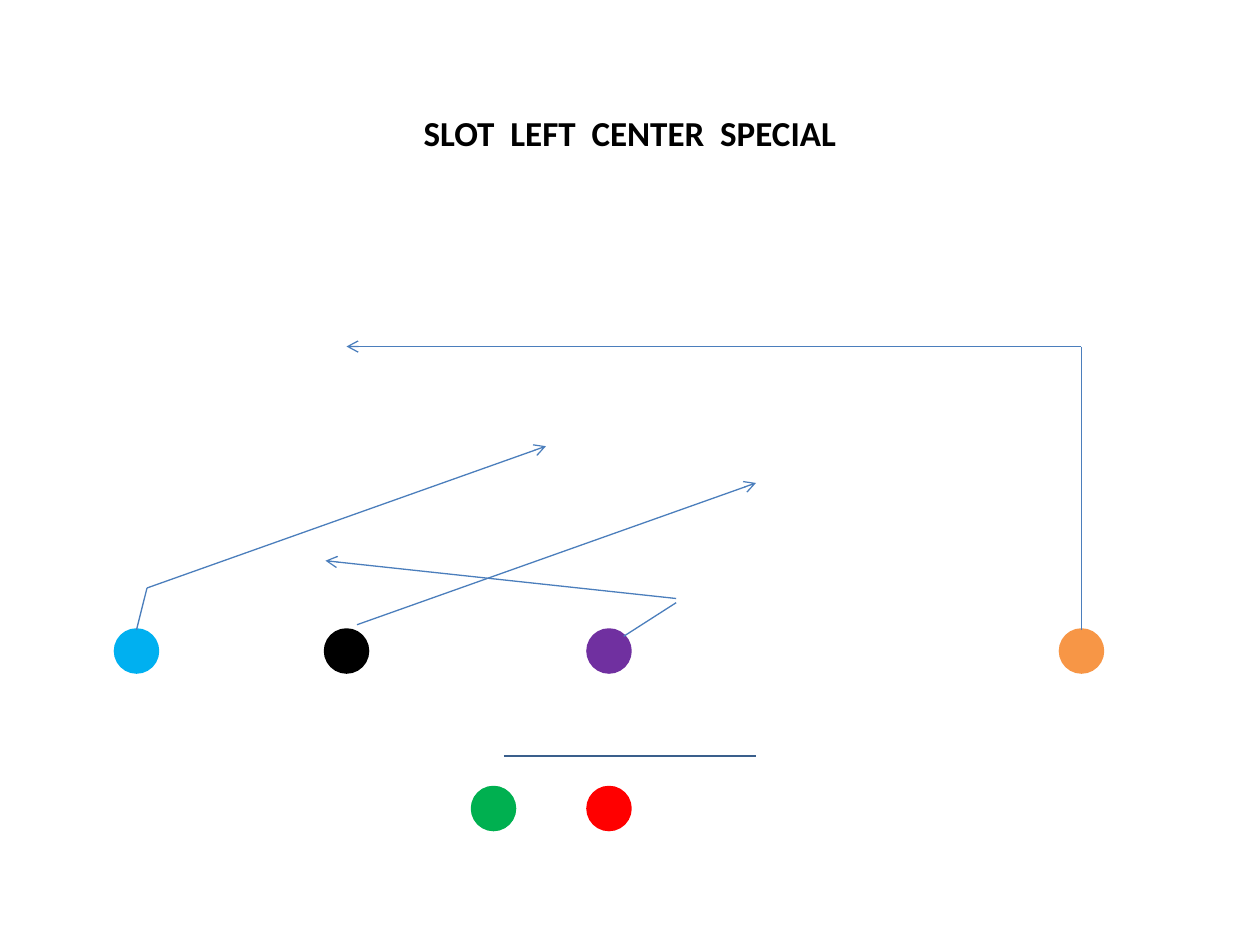
from lxml import etree
from pptx import Presentation
from pptx.dml.color import RGBColor
from pptx.enum.shapes import MSO_CONNECTOR, MSO_SHAPE
from pptx.enum.text import MSO_ANCHOR, MSO_AUTO_SIZE, PP_ALIGN
from pptx.oxml.ns import qn
from pptx.util import Inches, Pt

BLACK = RGBColor(0x00, 0x00, 0x00)
BLUE = RGBColor(0x00, 0xB0, 0xF0)
GREEN = RGBColor(0x00, 0xB0, 0x50)
ORANGE = RGBColor(0xF7, 0x96, 0x46)
PURPLE = RGBColor(0x70, 0x30, 0xA0)
RED = RGBColor(0xFF, 0x00, 0x00)
ROUTE = RGBColor(0x4B, 0x7E, 0xBC)
MOTION = RGBColor(0x3A, 0x5F, 0x8C)

COLUMNS, ROWS = 120, 90  # twelve grid units to the inch
PLAYER_SIZE = 4
OVAL_TOP = 0
LINE_ROW, BACK_ROW = 60, 75

# Inches from the slide's corner
MOTION_POINTS = [
    (4.08, 6.32), (4.23, 6.31), (4.38, 6.3), (4.49, 6.26), (4.52, 6.25),
    (4.55, 6.22), (4.59, 6.21), (4.61, 6.17), (4.65, 6.13), (4.66, 6.11),
    (4.66, 6.08), (4.64, 6.04), (4.6, 6.02), (4.63, 6.04), (4.72, 6.02),
    (4.76, 6.01), (4.82, 6.02), (4.86, 6.04), (5, 6.05), (5.53, 6.04),
    (5.57, 6.02), (5.72, 6.01), (5.76, 6),
]


def format_text(frame, text, size, color, font="Calibri", bold=False,
                align=PP_ALIGN.CENTER):
    para = frame.paragraphs[0]
    para.alignment = align
    span = para.add_run()
    span.text = text
    span.font.name, span.font.size, span.font.bold = font, Pt(size), bold
    span.font.color.rgb = color


class PlayDiagram:
    def __init__(self, deck):
        self.unit_x = deck.slide_width / COLUMNS
        self.unit_y = deck.slide_height / ROWS
        self.page = deck.slides.add_slide(deck.slide_layouts[5])
        self.shapes = self.page.shapes

    def grid(self, column, row):
        return round(column * self.unit_x), round(row * self.unit_y)

    def title(self, text, column, row, width, height):
        box = self.shapes.title
        box.left, box.top = self.grid(column, row)
        box.width, box.height = self.grid(width, height)
        frame = box.text_frame
        frame.word_wrap = False
        frame.auto_size = MSO_AUTO_SIZE.SHAPE_TO_FIT_TEXT
        frame.vertical_anchor = MSO_ANCHOR.TOP
        format_text(frame, text, 20, BLACK, bold=True)

    def player(self, column, row, color):
        circle = self.shapes.add_shape(
            MSO_SHAPE.OVAL, *self.grid(column, row),
            *self.grid(PLAYER_SIZE, PLAYER_SIZE))
        circle.shadow.inherit = False
        circle.fill.solid()
        circle.fill.fore_color.rgb = color
        circle.line.color.rgb = color
        circle.line.width = Pt(2)
        return circle

    def route(self, start, end, arrow=False, player=None):
        """Draw a straight route, leaving from the top of player if given."""
        line = self.shapes.add_connector(
            MSO_CONNECTOR.STRAIGHT, *self.grid(*start), *self.grid(*end))
        if player is not None:
            line.begin_connect(player, OVAL_TOP)
        line.line.color.rgb = ROUTE
        line.line.width = Pt(0.75)
        if arrow:
            etree.SubElement(line.line._get_or_add_ln(), qn("a:tailEnd"),
                             type="arrow")
        etree.SubElement(line._element.spPr, qn("a:effectLst"))

    def motion(self, points):
        builder = self.shapes.build_freeform(*points[0], scale=Inches(1))
        builder.add_line_segments(points[1:], close=False)
        path = builder.convert_to_shape()
        path.shadow.inherit = False
        path.fill.background()
        path.line.color.rgb = MOTION
        path.line.width = Pt(1)


def main():
    deck = Presentation()
    deck.slide_width, deck.slide_height = Inches(10), Inches(7.5)
    play = PlayDiagram(deck)

    play.player(56, LINE_ROW, PURPLE)
    play.player(45, BACK_ROW, GREEN)
    wide_right = play.player(101, LINE_ROW, ORANGE)
    play.player(31, LINE_ROW, BLACK)
    wide_left = play.player(11, LINE_ROW, BLUE)
    play.player(56, BACK_ROW, RED)

    play.title("SLOT  LEFT  CENTER  SPECIAL", 39, 10, 42, 5.25)

    play.route((64.4, 57), (31, 53.4), arrow=True)
    play.route((14, 56), (52, 42.5), arrow=True)
    play.route((103, 33), (33, 33), arrow=True)
    play.route((34, 59.5), (72, 46), arrow=True)
    play.route((13, LINE_ROW), (14, 56), player=wide_left)
    play.route((59.4, 60.6), (64.4, 57.4))
    play.route((103, LINE_ROW), (103, 33), player=wide_right)
    play.motion(MOTION_POINTS)

    deck.save("out.pptx")


if __name__ == "__main__":
    main()
